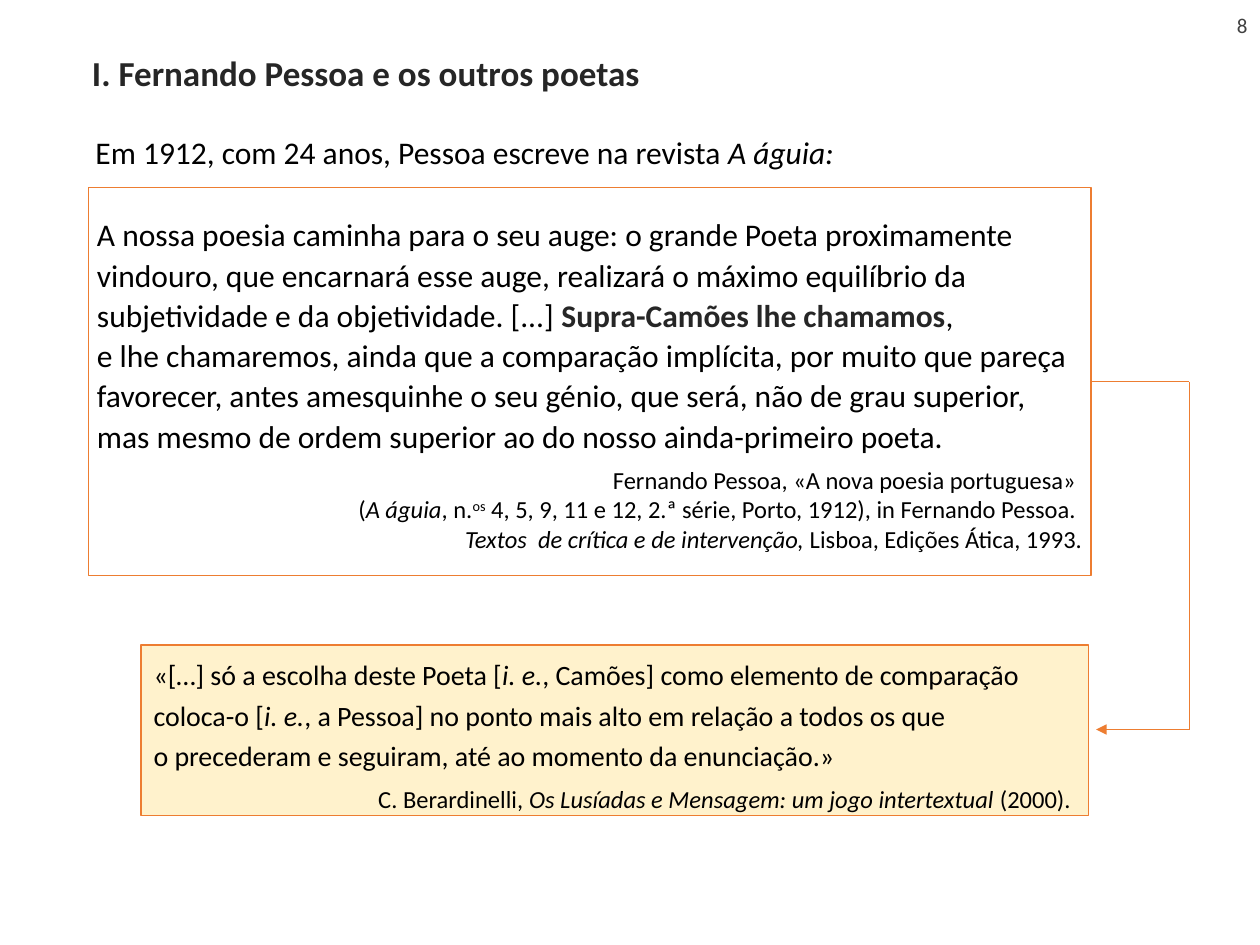
"""Build a slide on Fernando Pessoa and the other poets."""
from copy import deepcopy

from lxml import etree
from pptx import Presentation
from pptx.dml.color import RGBColor
from pptx.enum.shapes import MSO_CONNECTOR, MSO_SHAPE
from pptx.enum.text import MSO_ANCHOR, PP_ALIGN
from pptx.oxml.ns import qn
from pptx.util import Inches, Pt

LEFT, RIGHT = PP_ALIGN.LEFT, PP_ALIGN.RIGHT
TOP, MIDDLE = MSO_ANCHOR.TOP, MSO_ANCHOR.MIDDLE
RECT, STRAIGHT = MSO_SHAPE.RECTANGLE, MSO_CONNECTOR.STRAIGHT
COLS, ROWS = 100, 75
ITALIC = {"italic": True}


def rgb(value):
    return RGBColor.from_string(value)


class Deck:
    """Hold the style and the current slide."""

    font, ink, dark, grey = "Calibri", "000000", "262626", "404040"
    accent, cream = "ED7D31", "FFF2CC"

    def __init__(self):
        self.prs = Presentation()
        self.prs.slide_width, self.prs.slide_height = Inches(10), Inches(7.5)
        self.s = self.prs.slides.add_slide(self.prs.slide_layouts[5])

    def grid(self, *cells):
        units = self.prs.slide_width / COLS, self.prs.slide_height / ROWS
        return [round(n * units[i % 2]) for i, n in enumerate(cells)]

    def add_run(self, p, text, size, color, style):
        fmt = {"name": self.font, "size": Pt(size), **style}
        raised = fmt.pop("raised", False)
        for i, part in enumerate(text.split("\n")):
            if i:
                p.add_line_break()
                p._p[-1].insert(0, deepcopy(r._r.rPr))
            r = p.add_run()
            r.text = part
            for key, value in fmt.items():
                setattr(r.font, key, value)
            r.font.color.rgb = rgb(color)
            if raised:
                r._r.get_or_add_rPr().set("baseline", "30000")

    def set_text(self, sp, paragraphs, inset=(1, 0.5), top=None, anchor=TOP):
        tf = sp.text_frame
        side, edge = self.grid(*inset)
        frame = {"word_wrap": True, "vertical_anchor": anchor,
                 "margin_left": side, "margin_right": side, "margin_bottom": edge,
                 "margin_top": edge if top is None else self.grid(0, top)[1]}
        for key, value in frame.items():
            setattr(tf, key, value)
        for i, (size, fmt, runs) in enumerate(paragraphs):
            p = tf.add_paragraph() if i else tf.paragraphs[0]
            for key, value in {"alignment": LEFT, **fmt}.items():
                setattr(p, key, value)
            for text, color, style in runs:
                self.add_run(p, text, size, color, style)

    def title(self, cells, text):
        sp = self.s.shapes.title
        sp.left, sp.top, sp.width, sp.height = self.grid(*cells)
        run = (text, self.dark, {"bold": True})
        self.set_text(sp, [(20, {"line_spacing": 0.8}, [run])])

    def text(self, cells, paragraphs, **frame):
        self.set_text(self.s.shapes.add_textbox(*self.grid(*cells)), paragraphs, **frame)

    def box(self, cells, paragraphs, fill=None, **frame):
        sp = self.s.shapes.add_shape(RECT, *self.grid(*cells))
        sp.shadow.inherit = False
        if fill:
            sp.fill.solid()
            sp.fill.fore_color.rgb = rgb(fill)
        else:
            sp.fill.background()
        sp.line.color.rgb = rgb(self.accent)
        sp.line.width = Pt(0.75)
        self.set_text(sp, paragraphs, **frame)
        return sp

    def line(self, start, end, source=None, arrow=False):
        c = self.s.shapes.add_connector(STRAIGHT, *self.grid(*start, *end))
        if source is not None:
            c.begin_connect(source, 3)
        c.line.color.rgb = rgb(self.accent)
        c.line.width = Pt(0.5)
        spPr = c._element.spPr
        if arrow:
            etree.SubElement(spPr.get_or_add_ln(), qn("a:tailEnd"), type="triangle")
        etree.SubElement(spPr, qn("a:effectLst"))


def main():
    d = Deck()
    ink = d.ink
    quote_fmt = {"line_spacing": Pt(23)}

    d.title((6.3, 4.2, 58, 3.8), "I. Fernando Pessoa e os outros poetas")
    d.text((6.6, 10.1, 74.3, 4), [(18, {}, [
        ("Em 1912, com 24 anos, Pessoa escreve na revista ", ink, {}),
        ("A águia:", ink, ITALIC)])])
    d.text((77.5, 0, 22.5, 4), [(12, {"alignment": RIGHT}, [("8", d.grey, {})])],
           anchor=MIDDLE)

    quote = d.box((7, 14.9, 79.6, 30.8), [
        (18, quote_fmt, [
            ("A nossa poesia caminha para o seu auge: o grande Poeta proximamente "
             "vindouro, que encarnará esse auge, realizará o máximo equilíbrio da "
             "subjetividade e da objetividade. [...] ", ink, {}),
            ("Supra-Camões lhe chamamos", d.dark, {"bold": True}),
            (", \ne lhe chamaremos, ainda que a comparação implícita, por muito que "
             "pareça favorecer, antes amesquinhe o seu génio, que será, não de grau "
             "superior, mas mesmo de ordem superior ao do nosso ainda-primeiro poeta.",
             ink, {})]),
        (14, {"alignment": RIGHT, "space_before": Pt(6)}, [
            ("Fernando Pessoa, «A nova poesia portuguesa» \n(", ink, {}),
            ("A águia", ink, ITALIC),
            (", n.", ink, {}),
            ("os", ink, {"raised": True}),
            (" 4, 5, 9, 11 e 12, 2.ª série, Porto, 1912), in Fernando Pessoa. \n",
             ink, {}),
            ("Textos  de crítica e de intervenção,", ink, ITALIC),
            (" Lisboa, Edições Ática, 1993.", ink, {})]),
    ], inset=(0.7, 0.4), top=2)

    d.box((11.2, 51.2, 75.2, 13.5), [
        (16, quote_fmt, [
            ("«[…] só a escolha deste Poeta [", ink, {}),
            ("i. e.", ink, ITALIC),
            (", Camões] como elemento de comparação coloca-o [", ink, {}),
            ("i. e.", ink, ITALIC),
            (", a Pessoa] no ponto mais alto em relação a todos os que \n"
             "o precederam e seguiram, até ao momento da enunciação.»", ink, {})]),
        (14, {"alignment": RIGHT, "space_before": Pt(7)}, [
            ("C. Berardinelli, ", ink, {}),
            ("Os Lusíadas e Mensagem: um jogo intertextual", ink, ITALIC),
            (" (2000). ", ink, {})]),
    ], fill=d.cream)

    upper, lower = (94.4, 30.3), (94.4, 57.9)
    d.line((86.6, 30.3), upper, source=quote)
    d.line(upper, lower)
    d.line(lower, (87, 57.9), arrow=True)
    d.prs.save("out.pptx")


if __name__ == "__main__":
    main()
